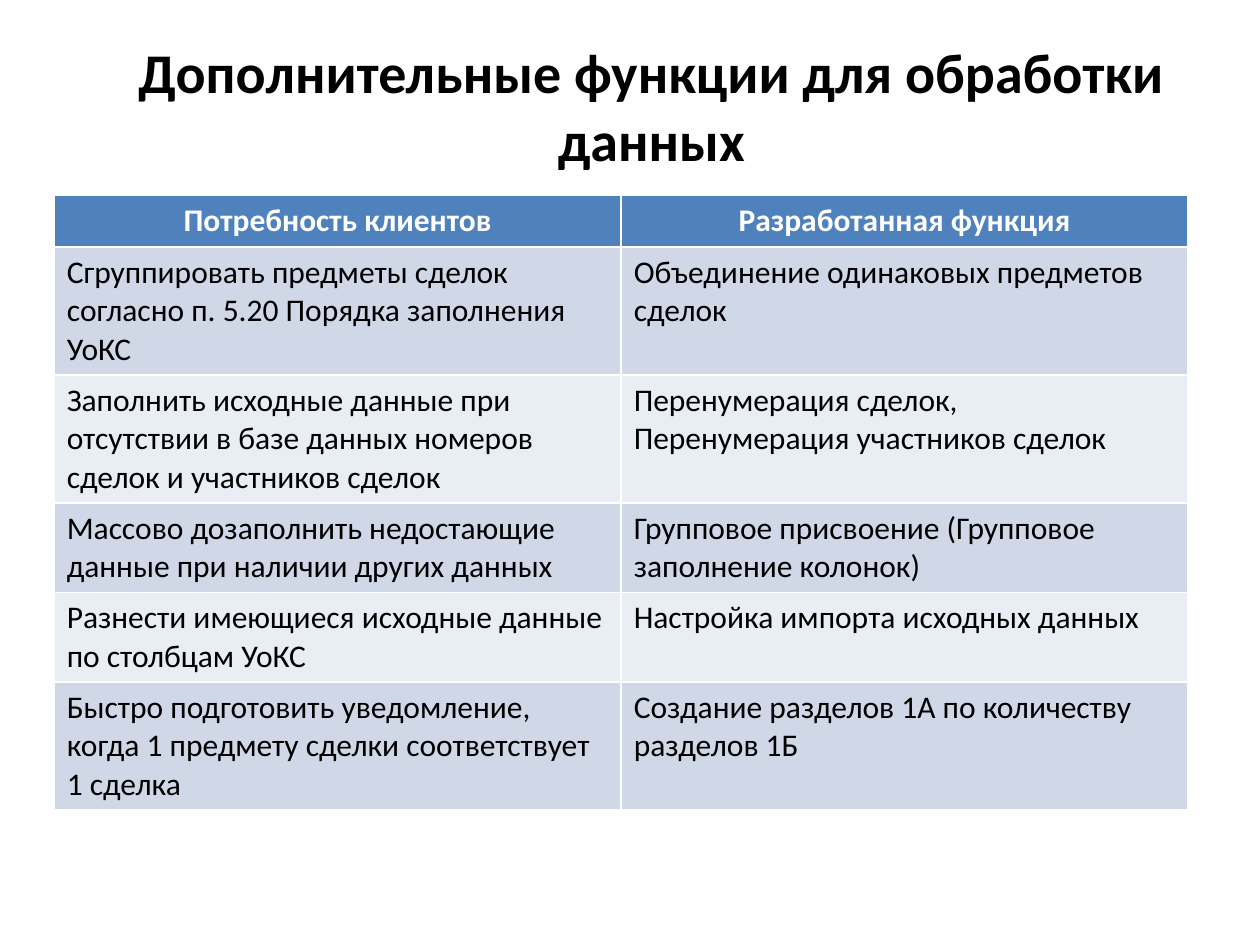
"""Build a slide with a table of client needs and the functions made for them."""
from pptx import Presentation
from pptx.dml.color import RGBColor
from pptx.enum.text import MSO_ANCHOR, PP_ALIGN
from pptx.util import Inches, Pt

BLACK = RGBColor(0x00, 0x00, 0x00)
WHITE = RGBColor(0xFF, 0xFF, 0xFF)
BLUE = RGBColor(0x4F, 0x81, 0xBD)
BANDS = [RGBColor(0xE9, 0xED, 0xF4), RGBColor(0xD0, 0xD8, 0xE8)]

ROWS = [
    ("Потребность клиентов", "Разработанная функция"),
    ("Сгруппировать предметы сделок согласно п. 5.20 Порядка заполнения УоКС",
     "Объединение одинаковых предметов сделок"),
    ("Заполнить исходные данные при отсутствии в базе данных номеров сделок и участников сделок",
     "Перенумерация сделок,\nПеренумерация участников сделок"),
    ("Массово дозаполнить недостающие данные при наличии других данных",
     "Групповое присвоение (Групповое заполнение колонок)"),
    ("Разнести имеющиеся исходные данные по столбцам УоКС",
     "Настройка импорта исходных данных"),
    ("Быстро подготовить уведомление, когда 1 предмету сделки соответствует 1 сделка",
     "Создание разделов 1А по количеству разделов 1Б"),
]


def style(para, size, color, bold, align):
    para.alignment = align
    font = para.font
    font.name = "Calibri"
    font.size = Pt(size)
    font.bold = bold
    font.color.rgb = color


deck = Presentation()
deck.slide_width = Inches(10)
deck.slide_height = Inches(7.5)
slide = deck.slides.add_slide(deck.slide_layouts[5])

title = slide.shapes.title
title.left, title.top = Inches(0.67), Inches(0.21)
title.width, title.height = Inches(9), Inches(1.25)
frame = title.text_frame
frame.text = "Дополнительные функции для обработки данных"
frame.vertical_anchor = MSO_ANCHOR.MIDDLE
style(frame.paragraphs[0], 32, BLACK, True, PP_ALIGN.CENTER)

table = slide.shapes.add_table(
    len(ROWS), 2, Inches(0.43), Inches(1.55), Inches(9), Inches(0.41) * len(ROWS)
).table

for r, texts in enumerate(ROWS):
    head = r == 0
    for c, text in enumerate(texts):
        cell = table.cell(r, c)
        cell.text = text
        cell.fill.solid()
        cell.fill.fore_color.rgb = BLUE if head else BANDS[r % 2]
        for para in cell.text_frame.paragraphs:
            style(para, 18, WHITE if head else BLACK, head,
                  PP_ALIGN.CENTER if head else PP_ALIGN.LEFT)

deck.save("out.pptx")
